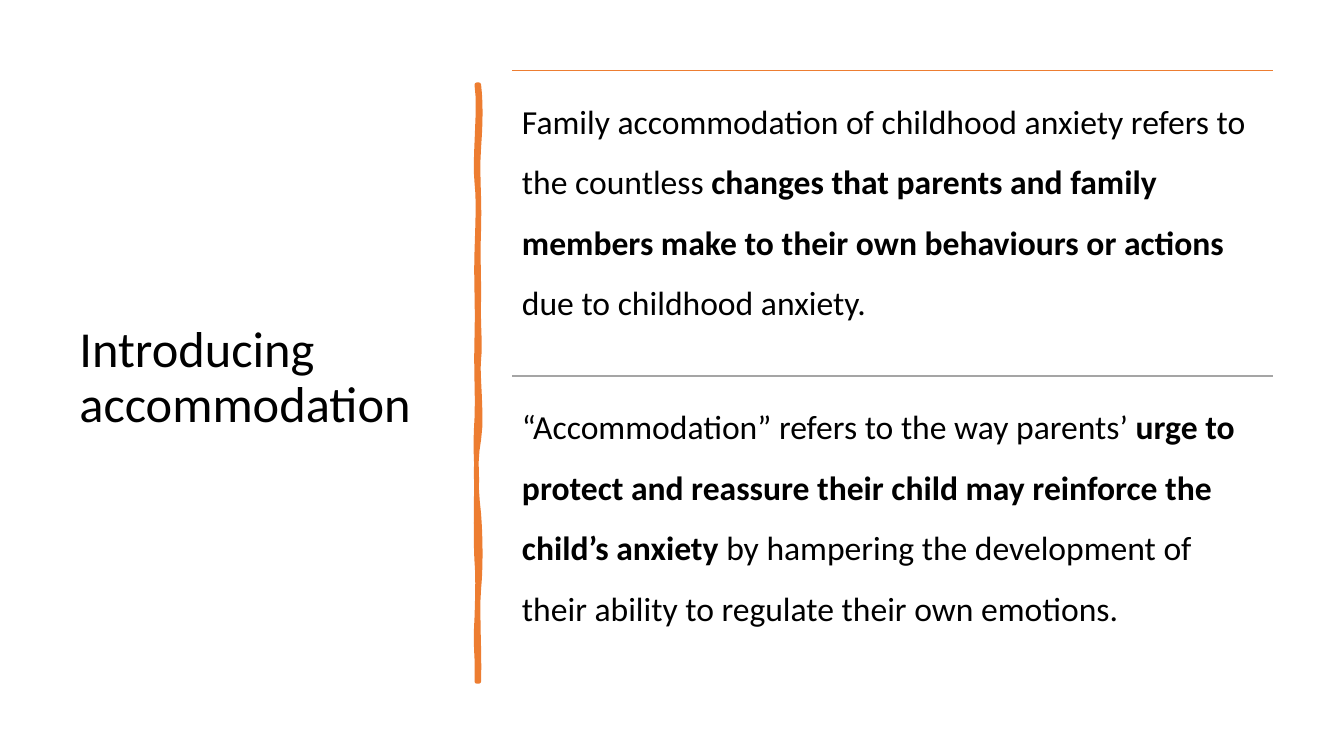
from dataclasses import dataclass

from lxml.etree import SubElement
from pptx import Presentation
from pptx.dml.color import RGBColor
from pptx.enum.shapes import MSO_CONNECTOR
from pptx.enum.text import MSO_ANCHOR
from pptx.oxml.ns import qn
from pptx.util import Inches, Pt

SLIDE_WIDTH, SLIDE_HEIGHT = Inches(13.333), Inches(7.5)
GRID_ROWS = 750
CELL = SLIDE_HEIGHT / GRID_ROWS
CURVE_STEPS = 6


@dataclass(frozen=True)
class Theme:
    font: str = "Calibri"
    ink: RGBColor = RGBColor(0, 0, 0)
    accent: RGBColor = RGBColor(0xED, 0x7D, 0x31)
    neutral: RGBColor = RGBColor(0xA5, 0xA5, 0xA5)
    title_size: int = 36
    body_size: int = 24
    rule_width: float = 1
    brush_width: float = 3.25


THEME = Theme()

TITLE_BOX = (69, 70, 374, 611)
STATEMENT_LEFT, STATEMENT_TOP = 508, 70
STATEMENT_WIDTH, STATEMENT_HEIGHT = 755, 303

STATEMENTS = [
    (THEME.accent, [
        ("Family accommodation of childhood anxiety refers to the countless", False),
        (" changes that parents and family members make to their own behaviours or actions ", True),
        ("due to childhood anxiety.", False),
    ]),
    (THEME.neutral, [
        ("“Accommodation” refers to the way parents’", False),
        (" urge to protect and reassure their child may reinforce the child’s anxiety ", True),
        ("by hampering the development of their ability to regulate their own emotions.", False),
    ]),
]

BRUSH_START = (475, 84)
BRUSH_CURVES = [
    (477, 102, 477, 119, 475, 146),
    (473, 173, 476, 195, 475, 226),
    (474, 257, 475, 262, 475, 294),
    (474, 325, 477, 342, 475, 356),
    (473, 370, 479, 414, 475, 436),
    (471, 457, 472, 484, 475, 510),
    (477, 536, 477, 564, 475, 584),
    (473, 603, 476, 650, 475, 676),
    (474, 676, 473, 676, 473, 676),
    (474, 646, 471, 644, 473, 613),
    (474, 583, 474, 570, 473, 557),
    (472, 544, 472, 495, 473, 477),
    (473, 459, 471, 445, 473, 415),
    (474, 386, 472, 373, 473, 335),
    (474, 298, 472, 281, 473, 250),
    (474, 218, 475, 200, 473, 181),
    (470, 163, 477, 104, 473, 84),
    (474, 84, 474, 84, 475, 84),
]


def grid(*cells):
    return [round(cell * CELL) for cell in cells]


def curve_points(start, curve):
    anchors = [start, curve[0:2], curve[2:4], curve[4:6]]
    for step in range(1, CURVE_STEPS + 1):
        t = step / CURVE_STEPS
        weights = ((1 - t) ** 3, 3 * t * (1 - t) ** 2, 3 * t * t * (1 - t), t ** 3)
        yield grid(*(sum(w * a[axis] for w, a in zip(weights, anchors)) for axis in (0, 1)))


def add_brush_stroke(slide):
    outline = []
    start = BRUSH_START
    for curve in BRUSH_CURVES:
        outline.extend(curve_points(start, curve))
        start = curve[4:6]
    builder = slide.shapes.build_freeform(*grid(*BRUSH_START))
    builder.add_line_segments(outline, close=True)
    stroke = builder.convert_to_shape()
    stroke.shadow.inherit = False
    stroke.fill.solid()
    stroke.fill.fore_color.rgb = THEME.accent
    stroke.line.color.rgb = THEME.accent
    stroke.line.width = Pt(THEME.brush_width)
    SubElement(stroke.line._get_or_add_ln(), qn("a:round"))


def add_rule(slide, left, top, width, color):
    rule = slide.shapes.add_connector(
        MSO_CONNECTOR.STRAIGHT, *grid(left, top, left + width, top))
    rule.line.color.rgb = color
    rule.line.width = Pt(THEME.rule_width)
    SubElement(rule._element.spPr, qn("a:effectLst"))


def add_text(slide, box, runs, size, line_spacing, anchor):
    frame = slide.shapes.add_textbox(*grid(*box)).text_frame
    frame.word_wrap = True
    frame.vertical_anchor = anchor
    frame.margin_left, frame.margin_right, frame.margin_top, frame.margin_bottom = grid(10, 10, 10, 10)
    paragraph = frame.paragraphs[0]
    paragraph.line_spacing = line_spacing
    for wording, bold in runs:
        run = paragraph.add_run()
        run.text = wording
        run.font.name = THEME.font
        run.font.size = Pt(size)
        run.font.bold = bold
        run.font.color.rgb = THEME.ink


def add_statement(slide, row, rule_color, runs):
    top = STATEMENT_TOP + row * STATEMENT_HEIGHT
    add_rule(slide, STATEMENT_LEFT, top, STATEMENT_WIDTH, rule_color)
    add_text(slide, (STATEMENT_LEFT, top, STATEMENT_WIDTH, STATEMENT_HEIGHT),
             runs, THEME.body_size, 1.5, MSO_ANCHOR.TOP)


def main():
    deck = Presentation()
    deck.slide_width, deck.slide_height = SLIDE_WIDTH, SLIDE_HEIGHT
    slide = deck.slides.add_slide(deck.slide_layouts[6])
    add_text(slide, TITLE_BOX, [("Introducing accommodation", False)],
             THEME.title_size, 0.9, MSO_ANCHOR.MIDDLE)
    add_brush_stroke(slide)
    for row, (rule_color, runs) in enumerate(STATEMENTS):
        add_statement(slide, row, rule_color, runs)
    deck.save("out.pptx")


if __name__ == "__main__":
    main()
